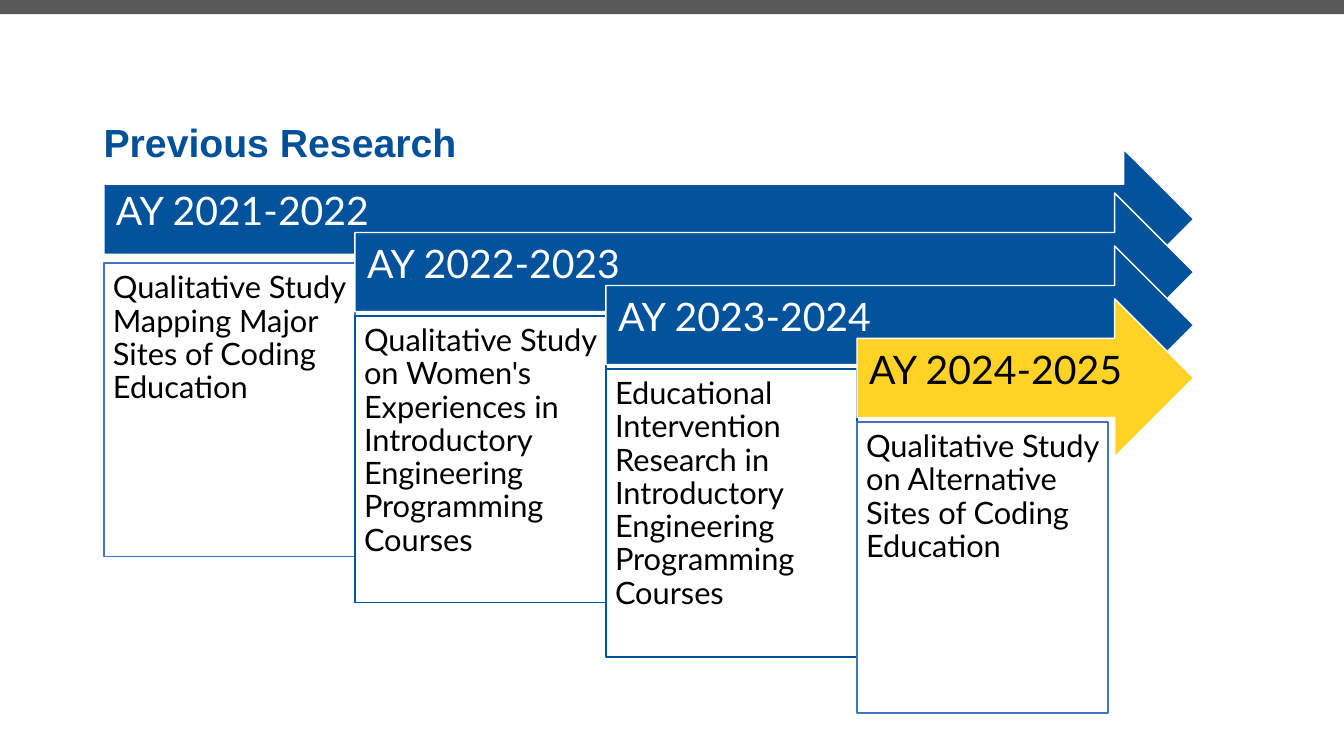
from pptx import Presentation
from pptx import util as u
from pptx.dml.color import RGBColor
from pptx.enum import shapes, text

TITLE = "Previous Research"
# year, study, arrow fill, label colour, box outline, box height
YEARS = [
    ("AY 2021-2022", "Qualitative Study Mapping Major Sites of Coding Education",
     "blue", "white", "outline", 2.91),
    ("AY 2022-2023", "Qualitative Study on Women's Experiences in Introductory "
     "Engineering Programming Courses", "blue", "white", "blue", 2.84),
    ("AY 2023-2024", "Educational Intervention Research in Introductory "
     "Engineering Programming Courses", "blue", "white", "blue", 2.86),
    ("AY 2024-2025", "Qualitative Study on Alternative Sites of Coding Education",
     "yellow", "black", "outline", 2.89),
]
COLORS = {"blue": "02539C", "title": "00509A", "yellow": "FFD325", "outline": "4472C4",
          "white": "FFFFFF", "black": "000000", "bar": "595959"}

WIDTH, HEIGHT = 13.33, 7.5
LEFT, RIGHT = 1.03, 11.84             # start of the first arrow, shared arrow tip
COLUMN, STEP = 2.49, 0.525            # shift of each year to the right and down
ARROW_TOP, ARROW_HEIGHT = 1.39, 1.57
FIRST_ARROW = (1.48, 1.39)            # the first arrow is slimmer
BOX_TOP = 2.61

prs = Presentation()
prs.slide_width, prs.slide_height = u.Inches(WIDTH), u.Inches(HEIGHT)
s = prs.slides.add_slide(prs.slide_layouts[6])


def rgb(name):
    return RGBColor.from_string(COLORS[name])


def add_shape(kind, box, fill=None, line=None):
    sp = s.shapes.add_shape(kind, *(u.Inches(v) for v in box))
    sp.shadow.inherit = False
    if fill:
        sp.fill.solid()
        sp.fill.fore_color.rgb = rgb(fill)
    else:
        sp.fill.background()
    if line:
        sp.line.color.rgb = rgb(line)
        sp.line.width = u.Pt(1)
    else:
        sp.line.fill.background()
    return sp


def write(sp, words, size, color, insets, anchor, font="Lato", bold=False, spacing=0.9):
    """Fill a shape with one left-aligned run; insets run left, top, right, bottom."""
    tf = sp.text_frame
    tf.word_wrap = True
    tf.vertical_anchor = anchor
    tf.margin_left, tf.margin_top, tf.margin_right, tf.margin_bottom = map(u.Inches, insets)
    p = tf.paragraphs[0]
    p.alignment = text.PP_ALIGN.LEFT
    p.line_spacing = spacing
    r = p.add_run()
    r.text = words
    r.font.name, r.font.size, r.font.bold = font, u.Pt(size), bold
    r.font.color.rgb = rgb(color)


add_shape(shapes.MSO_SHAPE.RECTANGLE, (0, 0, WIDTH, 0.14), "bar")
title = s.shapes.add_textbox(*(u.Inches(v) for v in (0.93, 1.12, 9.64, 0.57)))
write(title, TITLE, 28, "title", (0.1, 0.05, 0.1, 0.05), text.MSO_ANCHOR.BOTTOM,
      "Arial", True, 1.0)

for i, (year, study, fill, label, outline, box_height) in enumerate(YEARS):
    x, drop = LEFT + i * COLUMN, i * STEP
    top, height = (ARROW_TOP + drop, ARROW_HEIGHT) if i else FIRST_ARROW
    arrow = add_shape(shapes.MSO_SHAPE.RIGHT_ARROW, (x, top, RIGHT - x, height), fill, "white")
    write(arrow, year, 28, label, (0.12, 0.12, 0.25, 0.25), text.MSO_ANCHOR.MIDDLE)
    box = add_shape(shapes.MSO_SHAPE.RECTANGLE, (x, BOX_TOP + drop, COLUMN, box_height),
                    line=outline)
    write(box, study, 22, "black", (0.09,) * 4, text.MSO_ANCHOR.TOP)

prs.save("out.pptx")
